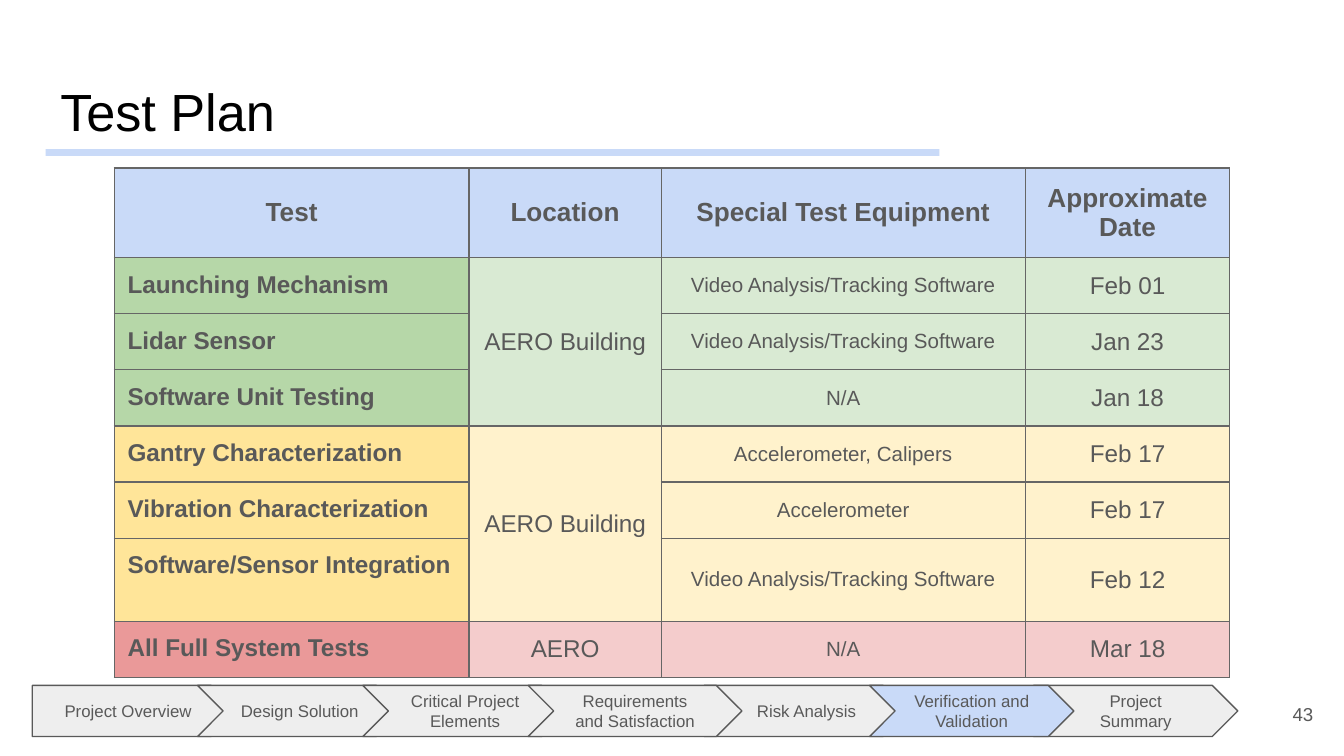
from lxml import etree
from pptx import Presentation
from pptx import util as u
from pptx.dml import color
from pptx.enum import shapes, text
from pptx.oxml import ns

Inches = u.Inches
FONT = "Arial"
COLORS = {
    "black": "000000", "text": "595959", "border": "666666",
    "step": "EEEEEE", "blue": "C9DAF8",
    "green": "B6D7A8", "light green": "D9EAD3",
    "yellow": "FFE599", "light yellow": "FFF2CC",
    "red": "EA9999", "light red": "F4CCCC",
}
LEFT, CENTER, RIGHT = text.PP_ALIGN.LEFT, text.PP_ALIGN.CENTER, text.PP_ALIGN.RIGHT
TOP, MIDDLE = text.MSO_ANCHOR.TOP, text.MSO_ANCHOR.MIDDLE

HEADERS = ["Test", "Location", "Special Test Equipment", "Approximate Date"]
TRACKING = "Video Analysis/Tracking Software"
# Colour, location, and (test, equipment, date) rows of each group
GROUPS = [
    ("green", "AERO Building", [
        ("Launching Mechanism", TRACKING, "Feb 01"),
        ("Lidar Sensor", TRACKING, "Jan 23"),
        ("Software Unit Testing", "N/A", "Jan 18")]),
    ("yellow", "AERO Building", [
        ("Gantry Characterization", "Accelerometer, Calipers", "Feb 17"),
        ("Vibration Characterization", "Accelerometer", "Feb 17"),
        ("Software/Sensor Integration", TRACKING, "Feb 12")]),
    ("red", "AERO", [("All Full System Tests", "N/A", "Mar 18")]),
]
COLUMN_WIDTHS = [2.64, 1.43, 2.71, 1.52]
ROW_HEIGHTS = [0.56, 0.4, 0.4, 0.4, 0.4, 0.4, 0.62, 0.4]
TABLE_HEIGHT = 3.28  # below the sum of the rows, so that none is stretched

# Words, left and width of each step
STEPS = [
    ("Project Overview", 0.24, 1.52), ("Design Solution", 1.47, 1.52),
    ("Critical Project Elements", 2.7, 1.52),
    ("Requirements and Satisfaction", 3.93, 1.59),
    ("Risk Analysis", 5.24, 1.52), ("Verification and Validation", 6.47, 1.52),
    ("Project Summary", 7.69, 1.52),
]
STEP_STACKING = [0, 1, 2, 6, 4, 3, 5]  # back to front
CURRENT_STEP = 5


def rgb(name):
    return color.RGBColor.from_string(COLORS[name])


def paint(item, name):
    item.fill.solid()
    item.fill.fore_color.rgb = rgb(name)


def set_margins(item):
    item.margin_left = item.margin_right = Inches(0.1)
    item.margin_top = item.margin_bottom = Inches(0.1)


def write(frame, words, size, align=CENTER, bold=False, ink="text"):
    frame.text = words
    para = frame.paragraphs[0]
    para.alignment = align
    for span in para.runs:
        span.font.name = FONT
        span.font.size = u.Pt(size)
        span.font.bold = bold
        span.font.color.rgb = rgb(ink)


def setup_frame(frame, anchor):
    frame.word_wrap = True
    frame.vertical_anchor = anchor
    set_margins(frame)


def add_text(page, area, words, size, align, anchor, ink="text"):
    box = page.shapes.add_textbox(*map(Inches, area))
    setup_frame(box.text_frame, anchor)
    write(box.text_frame, words, size, align, ink=ink)


def add_block(page, kind, area, fill):
    block = page.shapes.add_shape(kind, *map(Inches, area))
    block.shadow.inherit = False
    paint(block, fill)
    block.line.fill.background()
    return block


def add_progress_bar(page):
    for index in STEP_STACKING:
        words, left, width = STEPS[index]
        kind = shapes.MSO_SHAPE.CHEVRON if index else shapes.MSO_SHAPE.PENTAGON
        fill = "blue" if index == CURRENT_STEP else "step"
        step = add_block(page, kind, (left, 5.1, width, 0.38), fill)
        step.line.color.rgb = rgb("text")
        step.line.width = u.Pt(0.75)
        setup_frame(step.text_frame, MIDDLE)
        write(step.text_frame, words, 9)


def add_borders(cell):
    properties = cell._tc.get_or_add_tcPr()
    for side in ("a:lnL", "a:lnR", "a:lnT", "a:lnB"):
        line = etree.SubElement(properties, ns.qn(side), w=str(u.Pt(0.75)))
        fill = etree.SubElement(line, ns.qn("a:solidFill"))
        etree.SubElement(fill, ns.qn("a:srgbClr"), val=COLORS["border"])


def fill_cell(cell, words, fill, size, align=CENTER, bold=False, anchor=MIDDLE):
    add_borders(cell)
    paint(cell, fill)
    set_margins(cell)
    cell.vertical_anchor = anchor
    write(cell.text_frame, words, size, align, bold)


def add_test_table(page):
    frame = page.shapes.add_table(
        len(ROW_HEIGHTS), len(COLUMN_WIDTHS), Inches(0.85), Inches(1.25),
        Inches(sum(COLUMN_WIDTHS)), Inches(TABLE_HEIGHT))
    table = frame.table
    for column, width in zip(table.columns, COLUMN_WIDTHS):
        column.width = Inches(width)
    for row, height in zip(table.rows, ROW_HEIGHTS):
        row.height = Inches(height)
    frame.height = Inches(TABLE_HEIGHT)

    for column, words in enumerate(HEADERS):
        fill_cell(table.cell(0, column), words, "blue", 14, bold=True)

    first = 1
    for shade, location, tests in GROUPS:
        light = "light " + shade
        for row, (test, equipment, date) in enumerate(tests, first):
            fill_cell(table.cell(row, 0), test, shade, 13, LEFT, True, TOP)
            fill_cell(table.cell(row, 1), location if row == first else "", light, 13)
            fill_cell(table.cell(row, 2), equipment, light, 11)
            fill_cell(table.cell(row, 3), date, light, 13)
        last = first + len(tests) - 1
        if last > first:
            table.cell(first, 1).merge(table.cell(last, 1))
        first = last + 1


def main():
    deck = Presentation()
    deck.slide_width = Inches(10)
    deck.slide_height = deck.slide_width * 9 // 16
    page = deck.slides.add_slide(deck.slide_layouts[6])

    # Progress bar and title rule
    add_progress_bar(page)
    add_block(page, shapes.MSO_SHAPE.RECTANGLE, (0.34, 1.11, 6.65, 0.05), "blue")

    # Title and page number
    add_text(page, (0.35, 0.49, 6.62, 0.63), "Test Plan", 28, LEFT, TOP, "black")
    add_text(page, (9.27, 5.1, 0.6, 0.43), "43", 10, RIGHT, MIDDLE)

    # Test schedule
    add_test_table(page)
    deck.save("out.pptx")


if __name__ == "__main__":
    main()
